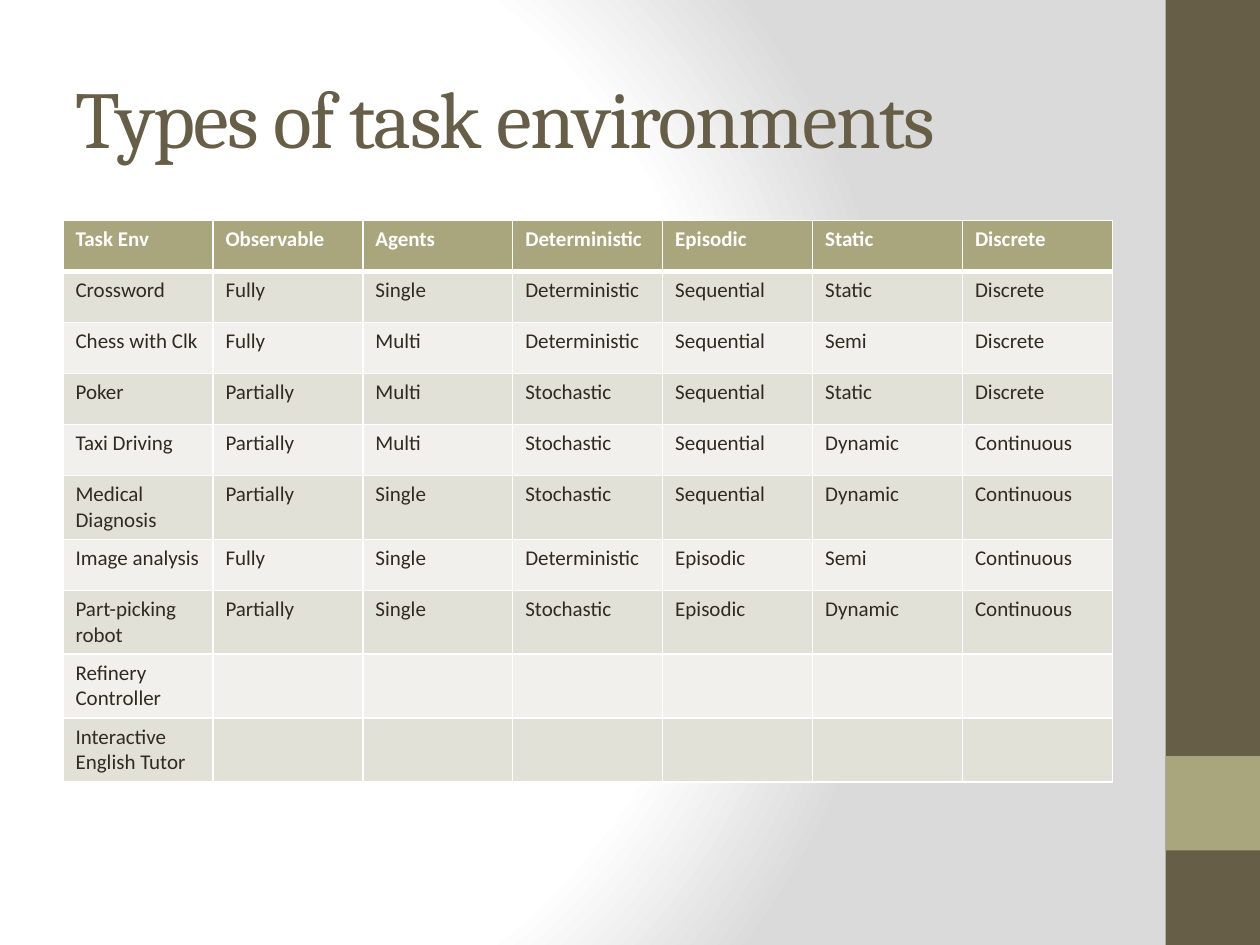
from pptx import Presentation
from pptx.dml.color import RGBColor
from pptx.enum import shapes, text
from pptx.oxml import parse_xml
from pptx.oxml.ns import nsdecls
from pptx.util import Inches, Pt

BROWN = RGBColor(0x67, 0x5E, 0x47)
OLIVE = RGBColor(0xA9, 0xA5, 0x7C)
INK = RGBColor(0x2F, 0x2B, 0x20)
WHITE = RGBColor(0xFF, 0xFF, 0xFF)
GREY = RGBColor(0xDA, 0xDA, 0xDA)
BAND_DARK = RGBColor(0xE2, 0xE1, 0xD7)
BAND_LIGHT = RGBColor(0xF1, 0xF0, 0xEC)

ROWS = [
    ["Task Env", "Observable", "Agents", "Deterministic", "Episodic", "Static", "Discrete"],
    ["Crossword", "Fully", "Single", "Deterministic", "Sequential", "Static", "Discrete"],
    ["Chess with Clk", "Fully", "Multi", "Deterministic", "Sequential", "Semi", "Discrete"],
    ["Poker", "Partially", "Multi", "Stochastic", "Sequential", "Static", "Discrete"],
    ["Taxi Driving", "Partially", "Multi", "Stochastic", "Sequential", "Dynamic", "Continuous"],
    ["Medical Diagnosis", "Partially", "Single", "Stochastic", "Sequential", "Dynamic", "Continuous"],
    ["Image analysis", "Fully", "Single", "Deterministic", "Episodic", "Semi", "Continuous"],
    ["Part-picking robot", "Partially", "Single", "Stochastic", "Episodic", "Dynamic", "Continuous"],
    ["Refinery Controller"] + [""] * 6,
    ["Interactive English Tutor"] + [""] * 6,
]


def add_border(cell, side, width):
    """Draw a white line on one side (L, R, T or B); call before filling the cell."""
    cell._tc.get_or_add_tcPr().append(parse_xml(
        f'<a:ln{side} {nsdecls("a")} w="{Pt(width)}"><a:solidFill>'
        f'<a:srgbClr val="{WHITE}"/></a:solidFill></a:ln{side}>'))


prs = Presentation()
prs.slide_width, prs.slide_height = Inches(10), Inches(7.5)
s = prs.slides.add_slide(prs.slide_layouts[5])

# Background: circular gradient
stops = "".join(f'<a:gs pos="{pos * 1000}"><a:srgbClr val="{color}"/></a:gs>'
                for pos, color in [(0, WHITE), (75, WHITE), (100, GREY)])
s._element.cSld.insert(0, parse_xml(
    f'<p:bg {nsdecls("p", "a")}><p:bgPr><a:gradFill rotWithShape="1">'
    f'<a:gsLst>{stops}</a:gsLst><a:path path="circle">'
    '<a:fillToRect l="20000" t="50000" r="100000" b="50000"/></a:path>'
    '</a:gradFill><a:effectLst/></p:bgPr></p:bg>'))

# Side bar with accent square
for top, height, color in [(0, 7.5, BROWN), (6, 0.75, OLIVE)]:
    sp = s.shapes.add_shape(shapes.MSO_SHAPE.RECTANGLE, Inches(9.25), Inches(top),
                            Inches(0.75), Inches(height))
    sp.shadow.inherit = False
    sp.fill.solid()
    sp.fill.fore_color.rgb = color
    sp.line.fill.background()

# Title
title = s.shapes.title
title.left, title.top = Inches(0.5), Inches(0.3)
title.width, title.height = Inches(8.33), Inches(1.25)
tf = title.text_frame
tf.text = "Types of task environments"
tf.auto_size = text.MSO_AUTO_SIZE.NONE
tf.vertical_anchor = text.MSO_ANCHOR.MIDDLE
p = tf.paragraphs[0]
p.alignment = text.PP_ALIGN.LEFT
p.font.name, p.font.size = "Cambria", Pt(46)
p.font.color.rgb = BROWN
p.runs[0].font._element.set("spc", "-100")

# Table
table = s.shapes.add_table(len(ROWS), len(ROWS[0]), Inches(0.5), Inches(1.75),
                           Inches(8.33), Inches(4.05)).table
for i, row in enumerate(ROWS):
    header = i == 0
    for j, value in enumerate(row):
        cell = table.cell(i, j)
        for side in "LRTB":
            thick = (header and side == "B") or (i == 1 and side == "T")
            add_border(cell, side, 3 if thick else 1)
        cell.fill.solid()
        cell.fill.fore_color.rgb = OLIVE if header else BAND_DARK if i % 2 else BAND_LIGHT
        cell.text = value
        p = cell.text_frame.paragraphs[0]
        p.font.name, p.font.size, p.font.bold = "Calibri", Pt(12), header
        p.font.color.rgb = WHITE if header else INK

prs.save("out.pptx")
